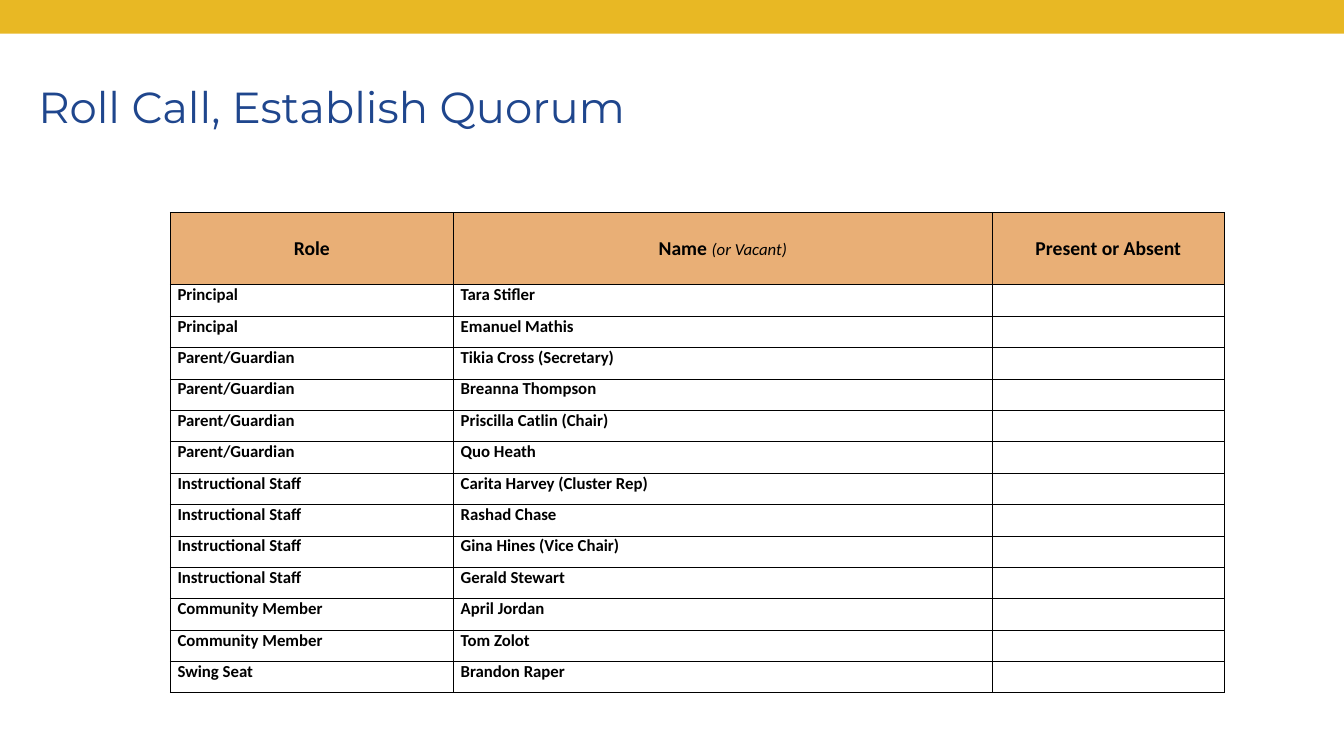
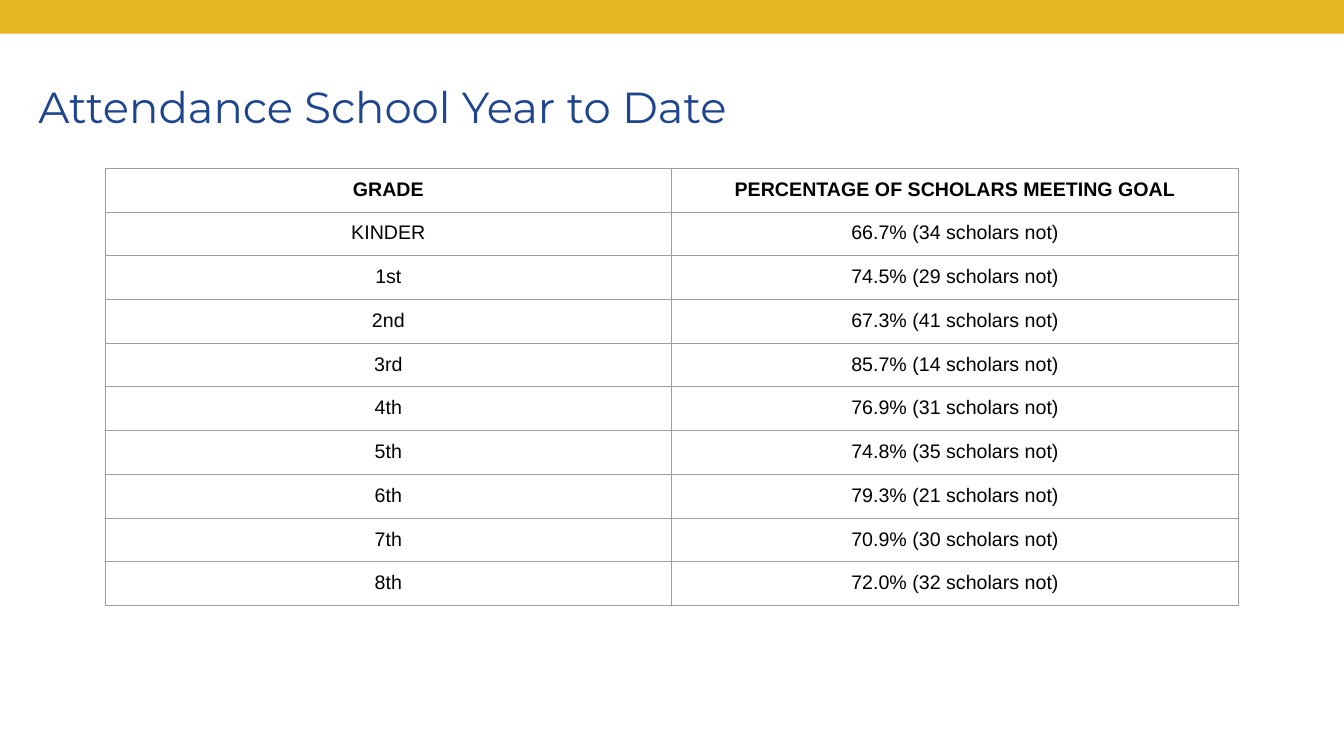
from dataclasses import dataclass

from lxml.etree import SubElement
from pptx import Presentation
from pptx.dml.color import RGBColor
from pptx.enum.shapes import MSO_SHAPE as Shape
from pptx.enum.text import MSO_ANCHOR as Anchor, MSO_AUTO_SIZE as AutoSize, PP_ALIGN as Align
from pptx.oxml.ns import qn
from pptx.util import Pt

COLORS = {
    "band": "E8B824",
    "title": "1F468D",
    "text": "000000",
    "roster_header": "E9AF76",
    "roster_border": "000000",
    "attendance_border": "9E9E9E",
}
WIDTH, HEIGHT = 960, 540
BLANK_LAYOUT = 6


def rgb(name):
    return RGBColor.from_string(COLORS[name])


@dataclass
class TextStyle:
    font: str
    size: float
    color: str = "text"
    bold: bool = False
    italic: bool = False


@dataclass
class CellStyle:
    inset_x: float
    inset_y: float
    border: str
    fill: str = ""
    align: Align = Align.LEFT
    anchor: Anchor = Anchor.TOP


TITLE = TextStyle("Montserrat", 31, "title")
ROSTER_HEAD = TextStyle("Calibri", 14, bold=True)
ROSTER_NOTE = TextStyle("Calibri", 12, italic=True)
ROSTER_BODY = TextStyle("Calibri", 12, bold=True)
GRADE_HEAD = TextStyle("Arial", 14, bold=True)
GRADE_BODY = TextStyle("Arial", 14)

ROSTER_HEAD_CELL = CellStyle(5.2, 0, "roster_border", "roster_header", Align.CENTER, Anchor.MIDDLE)
ROSTER_CELL = CellStyle(5.2, 0, "roster_border")
GRADE_CELL = CellStyle(7.2, 7.2, "attendance_border", align=Align.CENTER)

ROSTER_HEADINGS = [
    [("Role", ROSTER_HEAD)],
    [("Name ", ROSTER_HEAD), ("(or Vacant)", ROSTER_NOTE)],
    [("Present or Absent", ROSTER_HEAD)],
]
MEMBERS = {
    "Principal": ["Tara Stifler", "Emanuel Mathis"],
    "Parent/Guardian": ["Tikia Cross (Secretary)", "Breanna Thompson",
                        "Priscilla Catlin (Chair)", "Quo Heath"],
    "Instructional Staff": ["Carita Harvey (Cluster Rep)", "Rashad Chase",
                            "Gina Hines (Vice Chair)", "Gerald Stewart"],
    "Community Member": ["April Jordan", "Tom Zolot"],
    "Swing Seat": ["Brandon Raper"],
}
GRADE_HEADINGS = ["GRADE", "PERCENTAGE OF SCHOLARS MEETING GOAL"]
ATTENDANCE = [
    ("KINDER", "66.7", 34),
    ("1st", "74.5", 29),
    ("2nd", "67.3", 41),
    ("3rd", "85.7", 14),
    ("4th", "76.9", 31),
    ("5th", "74.8", 35),
    ("6th", "79.3", 21),
    ("7th", "70.9", 30),
    ("8th", "72.0", 32),
]


def styled(texts, style):
    """Turn plain cell texts into lists of runs; an empty text has no run."""
    return [[(text, style)] if text else [] for text in texts]


class Deck:
    def __init__(self):
        self.prs = Presentation()
        self.prs.slide_width, self.prs.slide_height = Pt(WIDTH), Pt(HEIGHT)
        self.slide = None

    def new_slide(self, title):
        self.slide = self.prs.slides.add_slide(self.prs.slide_layouts[BLANK_LAYOUT])
        self.band()
        self.title(title)

    def band(self):
        band = self.slide.shapes.add_shape(Shape.RECTANGLE, 0, 0, Pt(WIDTH), Pt(24))
        band.shadow.inherit = False
        band.fill.solid()
        band.fill.fore_color.rgb = rgb("band")
        band.line.fill.background()

    def title(self, text):
        frame = self.slide.shapes.add_textbox(Pt(18), Pt(47.5), Pt(816.5), Pt(57)).text_frame
        frame.word_wrap = True
        frame.auto_size = AutoSize.SHAPE_TO_FIT_TEXT
        frame.margin_left = frame.margin_right = Pt(9.4)
        frame.margin_top = frame.margin_bottom = Pt(9.4)
        self.runs(frame.paragraphs[0], [(text, TITLE)])

    def runs(self, paragraph, runs):
        for text, style in runs:
            run = paragraph.add_run()
            run.text = text
            font = run.font
            font.name, font.size = style.font, Pt(style.size)
            font.bold, font.italic = style.bold, style.italic
            font.color.rgb = rgb(style.color)

    def table(self, left, top, widths, heights, rows, head_cell, body_cell):
        table = self.slide.shapes.add_table(
            len(rows), len(widths), Pt(left), Pt(top), Pt(sum(widths)), Pt(sum(heights))).table
        table.first_row = table.horz_banding = False
        for column, width in zip(table.columns, widths):
            column.width = Pt(width)
        for r, (row, height) in enumerate(zip(rows, heights)):
            table.rows[r].height = Pt(height)
            for c, runs in enumerate(row):
                self.cell(table.cell(r, c), runs, body_cell if r else head_cell)

    def cell(self, cell, runs, style):
        cell.margin_left = cell.margin_right = Pt(style.inset_x)
        cell.margin_top = cell.margin_bottom = Pt(style.inset_y)
        cell.vertical_anchor = style.anchor
        paragraph = cell.text_frame.paragraphs[0]
        paragraph.alignment = style.align
        self.runs(paragraph, runs)
        self.borders(cell, style.border)
        if style.fill:
            cell.fill.solid()
            cell.fill.fore_color.rgb = rgb(style.fill)
        else:
            cell.fill.background()

    def borders(self, cell, color):
        """Draw all four sides; the schema wants them ahead of the cell's fill."""
        properties = cell._tc.get_or_add_tcPr()
        for side in ("a:lnL", "a:lnR", "a:lnT", "a:lnB"):
            line = SubElement(properties, qn(side), w=str(Pt(0.75)))
            fill = SubElement(line, qn("a:solidFill"))
            SubElement(fill, qn("a:srgbClr"), val=COLORS[color])


def main():
    deck = Deck()

    deck.new_slide("Roll Call, Establish Quorum")
    members = [styled([role, name, ""], ROSTER_BODY)
               for role, names in MEMBERS.items() for name in names]
    deck.table(121.6, 152, [202.3, 384.8, 166], [51.5] + [22.45] * len(members),
               [ROSTER_HEADINGS] + members, ROSTER_HEAD_CELL, ROSTER_CELL)

    deck.new_slide("Attendance School Year to Date")
    grades = [styled([grade, f"{percent}% ({missing} scholars not)"], GRADE_BODY)
              for grade, percent, missing in ATTENDANCE]
    rows = [styled(GRADE_HEADINGS, GRADE_HEAD)] + grades
    deck.table(75, 120.2, [404.8] * 2, [31.15] * len(rows), rows, GRADE_CELL, GRADE_CELL)

    deck.prs.save("out.pptx")


if __name__ == "__main__":
    main()
